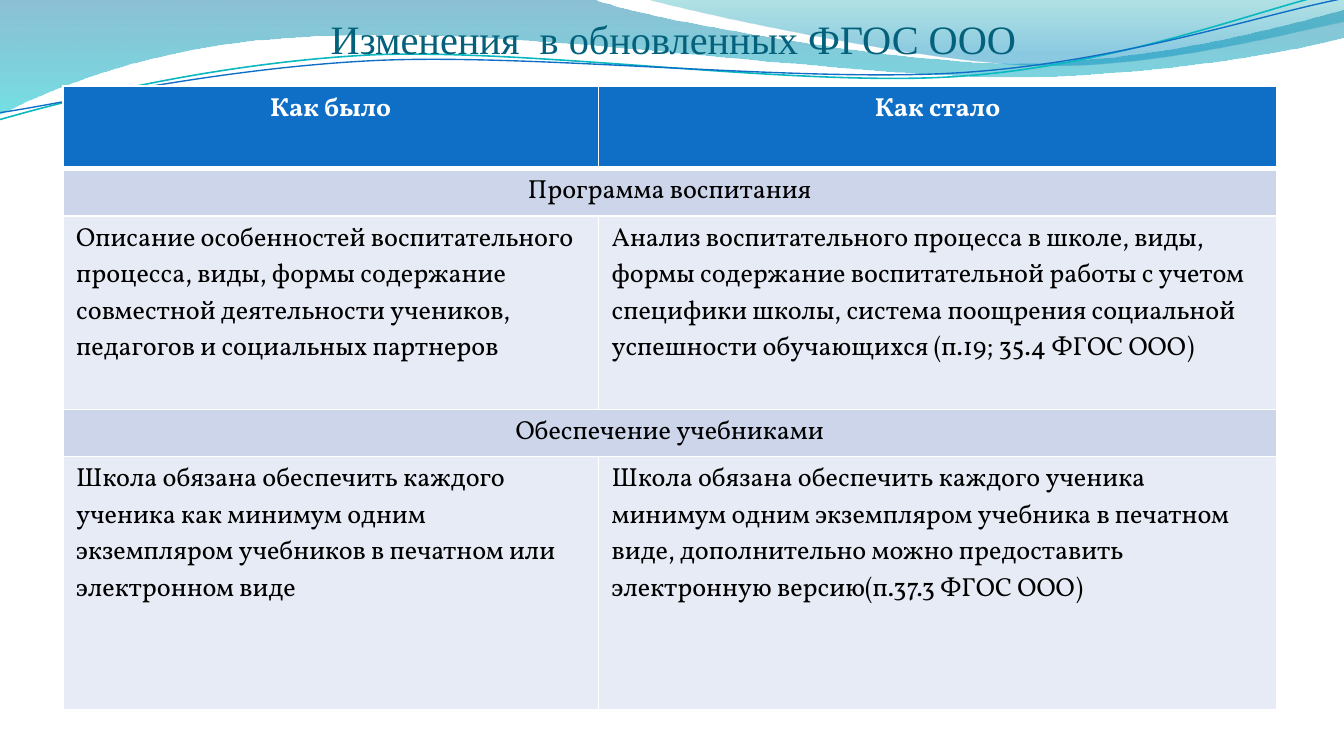
from lxml.etree import SubElement
from pptx import Presentation
from pptx.dml.color import RGBColor
from pptx.enum.text import MSO_ANCHOR, MSO_AUTO_SIZE, PP_ALIGN
from pptx.oxml.ns import qn
from pptx.util import Cm, Pt

# Content
TITLE = "Изменения  в обновленных ФГОС ООО"
ROWS = [  # height in cm, fill, cell texts (one text spans the row)
    (1.56, "0F6FC6", ["Как было", "Как стало"]),
    (0.89, "CCD5EA", ["Программа воспитания"]),
    (3.66, "E7EBF5", [
        "Описание особенностей воспитательного процесса, виды, формы содержание "
        "совместной деятельности учеников, педагогов и социальных партнеров",
        "Анализ воспитательного процесса в школе, виды, формы содержание "
        "воспитательной работы с учетом специфики школы, система поощрения "
        "социальной успешности обучающихся (п.19; 35.4 ФГОС ООО)"]),
    (0.89, "CCD5EA", ["Обеспечение учебниками"]),
    (4.78, "E7EBF5", [
        "Школа обязана обеспечить каждого ученика как минимум одним экземпляром "
        "учебников в печатном или электронном виде",
        "Школа обязана обеспечить каждого ученика минимум одним экземпляром "
        "учебника в печатном виде, дополнительно можно предоставить электронную "
        "версию(п.37.3 ФГОС ООО)"]),
]
COLS = [10.12, 12.82]

# Wave outlines in cm: two numbers are a line's end, six are a curve
BANDS = [  # gradient stops (position, colour, opacity in %), outline
    ([(0, "0074A1", 45), (1, "00C6CF", 55)],
     [(0, 0), (11.18, -0.03), (12.09, 0.33, 16.87, 1.19, 19.25, 1.19),
      (21.67, 1.19, 24.33, 0.48, 25.4, 0.18), (25.43, 0.69),
      (24.97, 0.84, 22.1, 1.45, 18.95, 1.45),
      (15.8, 1.42, 9.7, 0.53, 6.53, 0.66),
      (3.28, 0.69, 1.17, 1.57, -0.03, 2.16), (0, 0)]),
    ([(0, "00A1A9", 30), (0.8, "008BBF", 45)],
     [(12.17, -0.03), (12.93, 0.2, 17.32, 1.17, 19.53, 1.24),
      (21.74, 1.32, 24.41, 0.61, 25.4, 0.41), (25.4, 0), (12.17, -0.03)]),
]
LINES = [  # colour, width in points, outline before the tilt
    ("0AB8BF", 0.85,
     [(-0.04, 1.66), (1.19, 1.37, 4.02, 0.78, 7.05, 0.77),
      (10.07, 0.79, 15.01, 1.76, 18.06, 1.7),
      (21.14, 1.64, 23.88, 0.68, 25.4, 0.42)]),
    ("0F6FC6", 0.75,
     [(-0.03, 1.53), (1.16, 1.42, 4.17, 0.87, 7.2, 0.88),
      (10.25, 0.9, 15.14, 1.69, 18.19, 1.63),
      (21.22, 1.57, 23.93, 0.78, 25.44, 0.57)]),
]
TILT = 357.3


def rgb(code):
    return RGBColor.from_string(code)


def write(frame, text, font="Vollkorn", size=14, color="000000", bold=False,
          align=PP_ALIGN.LEFT):
    para = frame.paragraphs[0]
    para.alignment = align
    run = para.add_run()
    run.text = text
    run.font.name, run.font.size, run.font.bold = font, Pt(size), bold
    run.font.color.rgb = rgb(color)


def draw(shapes, parts, close):
    """Build an outline through the end points, then bend its curves."""
    ends = [(Cm(part[-2]), Cm(part[-1])) for part in parts]
    pen = shapes.build_freeform(*ends[0])
    pen.add_line_segments(ends[1:], close=close)
    shape = pen.convert_to_shape()
    shape.shadow.inherit = False
    sides = list(shape.element.iter(qn("a:lnTo")))
    for side, part in zip(sides, parts[1:]):
        if len(part) == 6:
            side.tag = qn("a:cubicBezTo")
            for i in (0, 2):
                dot = SubElement(side, qn("a:pt"),
                                 x=str(Cm(part[i]) - shape.left),
                                 y=str(Cm(part[i + 1]) - shape.top))
                side.insert(i // 2, dot)
    return shape


def edge(cell, side, width):
    line = SubElement(cell._tc.get_or_add_tcPr(), qn("a:ln" + side),
                      w=str(Pt(width)))
    fill = SubElement(line, qn("a:solidFill"))
    SubElement(fill, qn("a:srgbClr"), val="FFFFFF")


def main():
    deck = Presentation()
    deck.slide_width, deck.slide_height = Cm(25.4), Cm(14.29)
    slide = deck.slides.add_slide(deck.slide_layouts[5])
    shapes = slide.shapes

    # Wave bands and lines
    for stops, parts in BANDS:
        band = draw(shapes, parts, True)
        band.line.fill.background()
        band.fill.gradient()
        band.fill.gradient_angle = 270
        for stop, (pos, color, _) in zip(band.fill.gradient_stops, stops):
            stop.position = pos
            stop.color.rgb = rgb(color)
        tints = band.element.spPr.iter(qn("a:srgbClr"))
        for tint, (_, _, alpha) in zip(tints, stops):
            SubElement(tint, qn("a:alpha"), val=str(alpha * 1000))
    for color, width, parts in LINES:
        wave = draw(shapes, parts, False)
        wave.rotation = TILT
        wave.fill.background()
        wave.line.color.rgb = rgb(color)
        wave.line.width = Pt(width)

    # Title, in front of the waves
    title = shapes.title
    shapes.element.append(title.element)
    title.left, title.top, title.width, title.height = map(
        Cm, (1.3, 0.44, 22.86, 0.74))
    frame = title.text_frame
    frame.auto_size = MSO_AUTO_SIZE.NONE
    frame.word_wrap = True
    frame.vertical_anchor = MSO_ANCHOR.BOTTOM
    frame.margin_left = frame.margin_right = frame.margin_bottom = 0
    frame.margin_top = Cm(0.13)
    write(frame, TITLE, font="Times New Roman", size=21.6, color="04617B",
          align=PP_ALIGN.CENTER)

    # Table
    high = sum(row[0] for row in ROWS)
    table = shapes.add_table(len(ROWS), len(COLS), Cm(1.19), Cm(1.63),
                             Cm(sum(COLS)), Cm(high)).table
    for col, width in zip(table.columns, COLS):
        col.width = Cm(width)
    for r, (height, fill, texts) in enumerate(ROWS):
        table.rows[r].height = Cm(height)
        head, span = r == 0, len(texts) == 1
        if span:
            table.cell(r, 0).merge(table.cell(r, len(COLS) - 1))
        for c in range(len(COLS)):
            cell = table.cell(r, c)
            for side in "LRTB":
                thick = (r, side) in [(0, "B"), (1, "T")]
                edge(cell, side, 3 if thick else 1)
            cell.fill.solid()
            cell.fill.fore_color.rgb = rgb(fill)
            cell.margin_left = cell.margin_right = Cm(0.25)
            cell.margin_top = cell.margin_bottom = Cm(0.1)
            if c < len(texts):
                write(cell.text_frame, texts[c], bold=head,
                      color="FFFFFF" if head else "000000",
                      align=PP_ALIGN.CENTER if head or span else PP_ALIGN.LEFT)

    deck.save("out.pptx")


if __name__ == "__main__":
    main()
